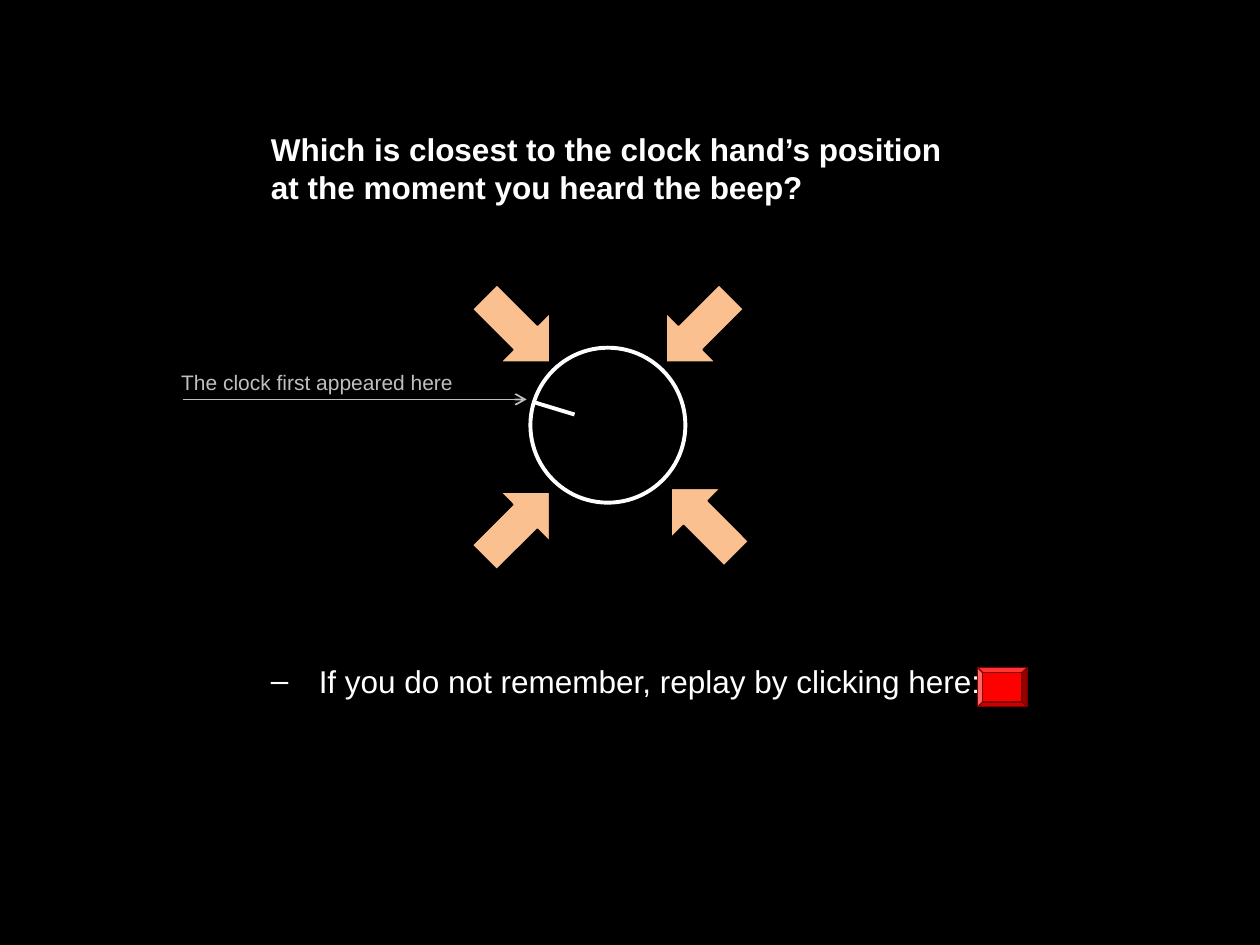
"""Build the slide that asks where the clock hand stood at the beep."""
from lxml import etree
from pptx import Presentation
from pptx.dml.color import RGBColor
from pptx.enum import shapes, text
from pptx.oxml import ns
from pptx.util import Inches, Pt

BLACK = RGBColor(0x00, 0x00, 0x00)
WHITE = RGBColor(0xFF, 0xFF, 0xFF)
GREY = RGBColor(0xBF, 0xBF, 0xBF)
PEACH = RGBColor(0xFA, 0xC0, 0x90)
RED = RGBColor(0xFF, 0x00, 0x00)
MAROON = RGBColor(0x80, 0x00, 0x00)
SHAPE = shapes.MSO_SHAPE
ARROW_SIZE = (0.73, 0.55)
ARROWS = [(5.22, 3.86, 225), (3.74, 3.89, 315), (5.18, 2.34, 135), (3.74, 2.34, 45)]


def write(tf, words, size=18, color=WHITE, bold=False, anchor=text.MSO_ANCHOR.TOP, wrap=True):
    tf.word_wrap = wrap
    tf.auto_size = text.MSO_AUTO_SIZE.NONE
    tf.vertical_anchor = anchor
    p = tf.paragraphs[0]
    p.text = words
    p.alignment = text.PP_ALIGN.LEFT
    for r in p.runs:
        r.font.name = "Arial"
        r.font.size = Pt(size)
        r.font.bold = bold
        r.font.color.rgb = color
    return p


class Deck:
    def __init__(self, prs, layout):
        self.s = prs.slides.add_slide(prs.slide_layouts[layout])
        self.s.background.fill.solid()
        self.s.background.fill.fore_color.rgb = BLACK

    def placeholder(self, idx, box, words, **style):
        sp = self.s.placeholders[idx]
        sp.left, sp.top, sp.width, sp.height = map(Inches, box)
        return write(sp.text_frame, words, **style)

    def dash_item(self, p, indent):
        p.space_after = Pt(18)
        pPr = p._p.get_or_add_pPr()
        pPr.set("marL", str(Inches(indent)))
        pPr.set("indent", str(-Inches(indent)))
        etree.SubElement(pPr, ns.qn("a:buFont")).set("typeface", "Arial")
        etree.SubElement(pPr, ns.qn("a:buChar")).set("char", "–")

    def label(self, box, words, **style):
        sp = self.s.shapes.add_textbox(*map(Inches, box))
        return write(sp.text_frame, words, **style)

    def shape(self, kind, box, line, width=0.75, fill=None, rotation=0):
        sp = self.s.shapes.add_shape(kind, *map(Inches, box))
        sp.shadow.inherit = False
        sp.rotation = rotation
        if fill is None:
            sp.fill.background()
        else:
            sp.fill.solid()
            sp.fill.fore_color.rgb = fill
        sp.line.color.rgb = line
        sp.line.width = Pt(width)
        return sp

    def line(self, start, end, color, width, arrow=False):
        c = self.s.shapes.add_connector(
            shapes.MSO_CONNECTOR.STRAIGHT, *map(Inches, start + end))
        c.line.color.rgb = color
        c.line.width = Pt(width)
        if arrow:
            etree.SubElement(c.line._get_or_add_ln(), ns.qn("a:tailEnd")).set("type", "arrow")
        etree.SubElement(c._element.spPr, ns.qn("a:effectLst"))
        return c


def main():
    prs = Presentation()
    prs.slide_width, prs.slide_height = Inches(10), Inches(7.5)
    deck = Deck(prs, 1)
    deck.placeholder(
        0, (2.05, 0.6, 7.95, 1.08),
        "Which is closest to the clock hand’s position\vat the moment you heard the beep?",
        bold=True, anchor=text.MSO_ANCHOR.BOTTOM)
    replay = deck.placeholder(
        1, (2.05, 5.2, 5.9, 1.59), "If you do not remember, replay by clicking here:")
    deck.dash_item(replay, 0.38)
    deck.shape(SHAPE.BEVEL, (7.76, 5.3, 0.39, 0.31), MAROON, fill=RED)
    deck.shape(SHAPE.OVAL, (4.21, 2.76, 1.23, 1.23), WHITE, width=2.25)
    deck.line((4.56, 3.29), (4.23, 3.19), WHITE, 2.25)
    for left, top, angle in ARROWS:
        deck.shape(SHAPE.RIGHT_ARROW, (left, top, *ARROW_SIZE), BLACK, fill=PEACH, rotation=angle)
    deck.line((1.45, 3.17), (4.18, 3.17), GREY, 1, arrow=True)
    deck.label((1.34, 2.88, 2.54, 0.3), "The clock first appeared here",
               size=12, color=GREY, wrap=False)
    prs.save("out.pptx")


if __name__ == "__main__":
    main()
